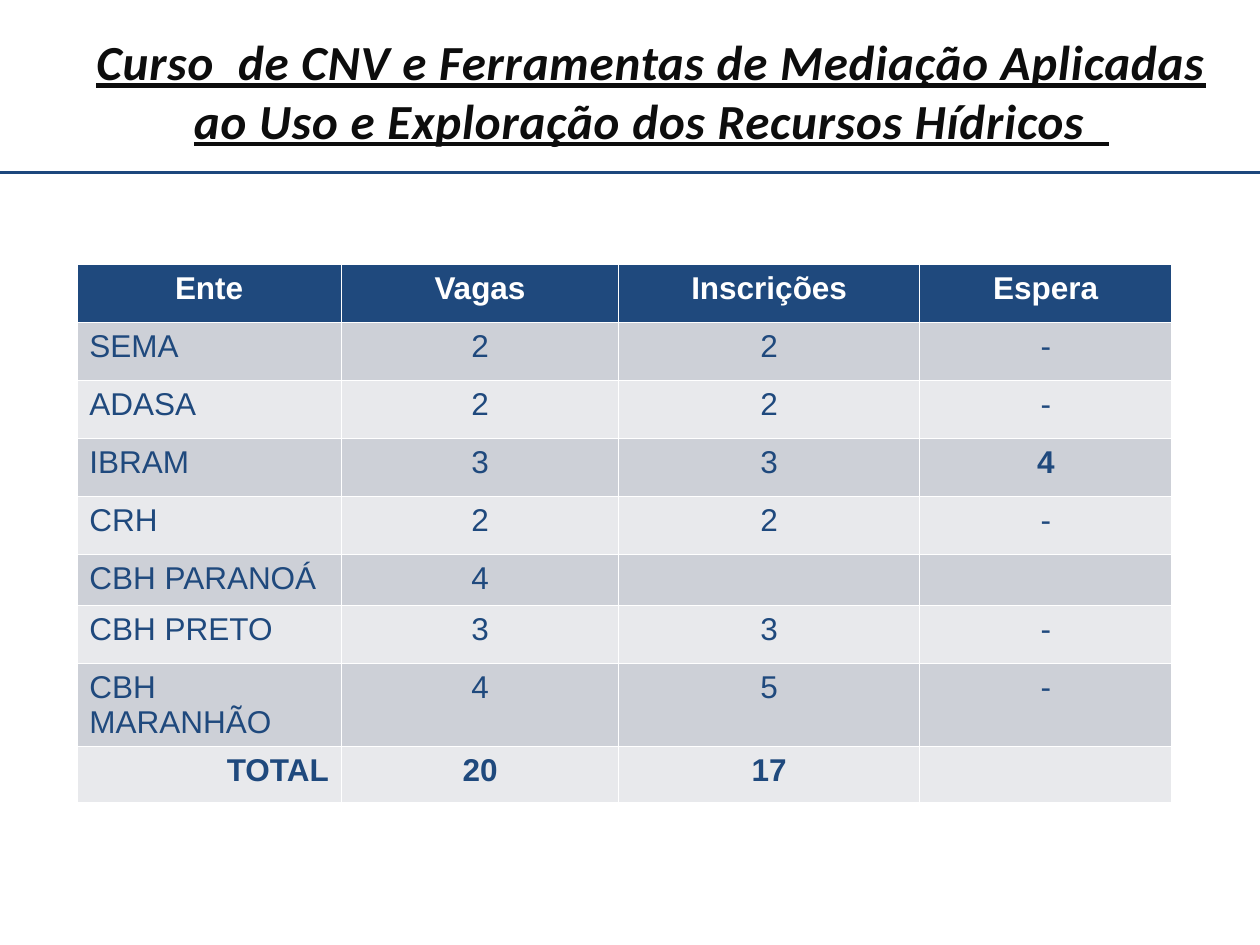
"""Build a slide with the course title and a table of places and enrolments per entity."""
from lxml.etree import SubElement
from pptx import Presentation
from pptx.dml.color import RGBColor
from pptx.enum.shapes import MSO_CONNECTOR
from pptx.enum.text import MSO_ANCHOR, MSO_AUTO_SIZE, PP_ALIGN as Align
from pptx.oxml.ns import qn
from pptx.util import Inches, Pt

COLORS = {
    "title": "0D0D0D",
    "rule": "1C477D",
    "navy": "1F497D",
    "white": "FFFFFF",
    "dark_band": "CDD0D7",
    "light_band": "E8E9EC",
}
TITLE = "Curso  de CNV e Ferramentas de Mediação Aplicadas ao Uso e Exploração dos Recursos Hídricos  "
TITLE_FORMAT = {"name": "Calibri", "size": Pt(28), "bold": True, "italic": True, "underline": True}
ROWS = [
    ("Ente", "Vagas", "Inscrições", "Espera"),
    ("SEMA", "2", "2", "-"),
    ("ADASA", "2", "2", "-"),
    ("IBRAM", "3", "3", "4"),
    ("CRH", "2", "2", "-"),
    ("CBH PARANOÁ", "4", "", ""),
    ("CBH PRETO", "3", "3", "-"),
    ("CBH MARANHÃO", "4", "5", "-"),
    ("TOTAL", "20", "17", ""),
]
COLUMN_WIDTHS = [2.1, 2.2, 2.39, 2]
ROW_HEIGHTS = [0.46, 0.46, 0.46, 0.46, 0.46, 0.4, 0.46, 0.41, 0.45]
LAST_ROW = len(ROWS) - 1
BOLD_CELLS = {(3, 3)}


def set_font(font, color, values):
    for name, value in values.items():
        setattr(font, name, value)
    font.color.rgb = RGBColor.from_string(COLORS[color])


presentation = Presentation()
presentation.slide_width = Inches(10)
presentation.slide_height = Inches(7.5)
slide = presentation.slides.add_slide(presentation.slide_layouts[5])

rule = slide.shapes.add_connector(
    MSO_CONNECTOR.STRAIGHT, Inches(0), Inches(1.37), Inches(10), Inches(1.37)
)
rule.line.color.rgb = RGBColor.from_string(COLORS["rule"])
rule.line.width = Pt(2)
SubElement(rule._element.spPr, qn("a:effectLst"))

title = slide.shapes.title
title.left, title.top = Inches(0.64), Inches(0)
title.width, title.height = Inches(9.06), Inches(1.43)
title_frame = title.text_frame
title_frame.auto_size = MSO_AUTO_SIZE.NONE
title_frame.word_wrap = True
title_frame.vertical_anchor = MSO_ANCHOR.MIDDLE
title_paragraph = title_frame.paragraphs[0]
title_paragraph.alignment = Align.CENTER
title_run = title_paragraph.add_run()
title_run.text = TITLE
set_font(title_run.font, "title", TITLE_FORMAT)
title_run._r.get_or_add_rPr().set("spc", "50")

table = slide.shapes.add_table(
    len(ROWS), len(COLUMN_WIDTHS), Inches(0.61), Inches(2.1), Inches(8.7), Inches(4.03)
).table
for column, width in zip(table.columns, COLUMN_WIDTHS):
    column.width = Inches(width)
for row, height in zip(table.rows, ROW_HEIGHTS):
    row.height = Inches(height)

for row_index, texts in enumerate(ROWS):
    is_header = row_index == 0
    band = "navy" if is_header else "dark_band" if row_index % 2 else "light_band"
    for column_index, text in enumerate(texts):
        cell = table.cell(row_index, column_index)
        cell.fill.solid()
        cell.fill.fore_color.rgb = RGBColor.from_string(COLORS[band])
        if not text:
            continue
        paragraph = cell.text_frame.paragraphs[0]
        if is_header or column_index > 0:
            paragraph.alignment = Align.CENTER
        else:
            paragraph.alignment = Align.RIGHT if row_index == LAST_ROW else Align.LEFT
        run = paragraph.add_run()
        run.text = text
        is_bold = row_index in (0, LAST_ROW) or (row_index, column_index) in BOLD_CELLS
        cell_format = {"name": "Arial", "size": Pt(18), "bold": is_bold}
        set_font(run.font, "white" if is_header else "navy", cell_format)

presentation.save("out.pptx")
